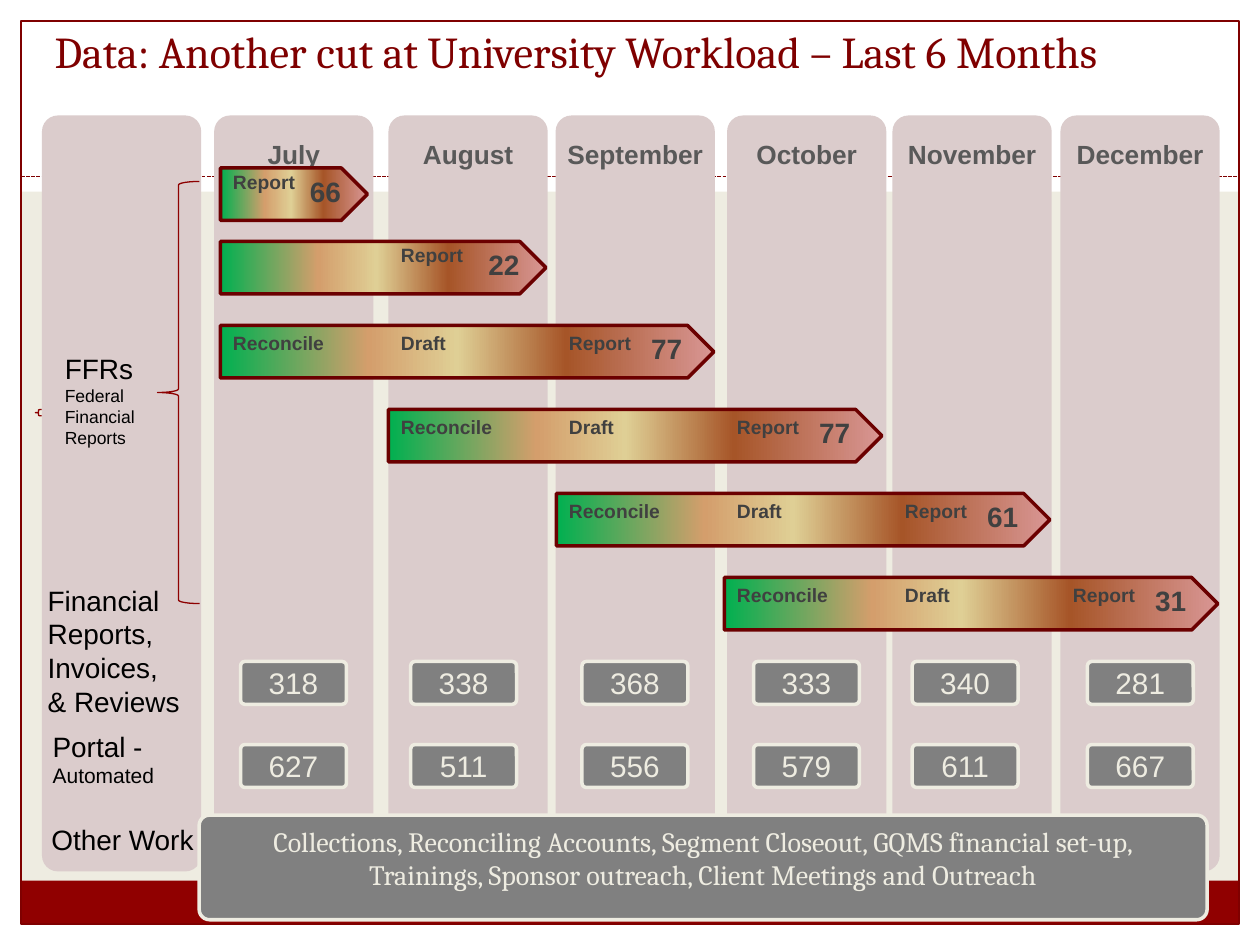
import dataclasses

import lxml.etree
import pptx
import pptx.dml.color
import pptx.enum.dml
import pptx.enum.shapes
import pptx.enum.text
import pptx.oxml.ns
import pptx.util

Pt = pptx.util.Pt
SHAPE = pptx.enum.shapes.MSO_SHAPE
ALIGN = pptx.enum.text.PP_ALIGN
ANCHOR = pptx.enum.text.MSO_ANCHOR
qn = pptx.oxml.ns.qn


@dataclasses.dataclass(frozen=True)
class Theme:
    sans: str = "Arial"
    serif: str = "Cambria"
    paper: str = "EEECE1"
    white: str = "FFFFFF"
    black: str = "000000"
    crimson: str = "900000"
    maroon: str = "7F0000"
    brace: str = "8D0000"
    bar_edge: str = "6B0000"
    column: str = "DBCCCC"
    badge: str = "808080"
    month: str = "595959"
    stage: str = "404040"
    bar_stops: tuple = ((0, "00B050"), (30, "D49E6C"), (48, "DFCF95"),
                        (70, "A65528"), (100, "D99694"), (100, "663012"))
    title_size: float = 25.2
    count_size: float = 17
    label_size: float = 16
    month_size: float = 15
    note_size: float = 12
    stage_size: float = 11
    small_size: float = 10


class WorkloadSlide:
    def __init__(self, deck, theme):
        self.theme = theme
        self.slide = deck.slides.add_slide(deck.slide_layouts[5])
        background = self.slide.background.fill
        background.solid()
        background.fore_color.rgb = self.rgb(theme.paper)

    def rgb(self, color):
        return pptx.dml.color.RGBColor.from_string(color)

    def set_text(self, frame, text, sizes, color, font=None, bold=False, align=ALIGN.LEFT):
        frame.text = text
        for index, paragraph in enumerate(frame.paragraphs):
            paragraph.alignment = align
            for run in paragraph.runs:
                self.style(run, sizes[min(index, len(sizes) - 1)], color, font, bold)

    def style(self, run, size, color, font=None, bold=False):
        run.font.size = Pt(size)
        run.font.name = font or self.theme.sans
        run.font.bold = bold
        run.font.color.rgb = self.rgb(color)

    def title(self, text, box):
        heading = self.slide.shapes.title
        heading.left, heading.top, heading.width, heading.height = map(Pt, box)
        frame = heading.text_frame
        frame.auto_size = pptx.enum.text.MSO_AUTO_SIZE.NONE
        frame.vertical_anchor = ANCHOR.BOTTOM
        self.set_text(frame, text, [self.theme.title_size], self.theme.maroon, self.theme.serif)
        self.slide.shapes.element.append(heading.element)

    def shape(self, kind, box, fill=None, line=None, weight=0.75, corner=None):
        shape = self.slide.shapes.add_shape(kind, *map(Pt, box))
        shape.shadow.inherit = False
        if fill:
            shape.fill.solid()
            shape.fill.fore_color.rgb = self.rgb(fill)
        else:
            shape.fill.background()
        if line:
            shape.line.color.rgb = self.rgb(line)
            shape.line.width = Pt(weight)
        else:
            shape.line.fill.background()
        if corner:
            shape.adjustments[0] = corner
        return shape

    def panel(self, box):
        return self.shape(SHAPE.ROUNDED_RECTANGLE, box, self.theme.column, corner=0.1)

    def badge(self, text, box, size, font=None, anchor=ANCHOR.MIDDLE, inset=0):
        badge = self.shape(SHAPE.ROUNDED_RECTANGLE, box, self.theme.badge,
                           self.theme.paper, 2, 0.1)
        frame = badge.text_frame
        frame.word_wrap = True
        frame.vertical_anchor = anchor
        frame.margin_top = frame.margin_bottom = Pt(inset)
        self.set_text(frame, text, [size], self.theme.paper, font, align=ALIGN.CENTER)

    def label(self, text, box, sizes, color, bold=False, align=ALIGN.LEFT):
        label = self.slide.shapes.add_textbox(*map(Pt, box))
        label.text_frame.word_wrap = True
        self.set_text(label.text_frame, text, sizes, color, bold=bold, align=align)
        return label.text_frame

    def bar(self, box):
        bar = self.shape(SHAPE.PENTAGON, box, line=self.theme.bar_edge, weight=2)
        bar.fill.gradient()
        bar.fill.gradient_angle = 0
        stops = bar.element.spPr.find(qn("a:gradFill")).find(qn("a:gsLst"))
        for stop in list(stops):
            stops.remove(stop)
        for position, color in self.theme.bar_stops:
            stop = lxml.etree.SubElement(stops, qn("a:gs"), pos=str(position * 1000))
            lxml.etree.SubElement(stop, qn("a:srgbClr"), val=color)

    def dashed_rule(self, left, right, top):
        rule = self.slide.shapes.add_connector(
            pptx.enum.shapes.MSO_CONNECTOR.STRAIGHT, Pt(left), Pt(top), Pt(right), Pt(top))
        rule.line.color.rgb = self.rgb(self.theme.maroon)
        rule.line.width = Pt(0.75)
        rule.line.dash_style = pptx.enum.dml.MSO_LINE.SQUARE_DOT
        lxml.etree.SubElement(rule.element.spPr, qn("a:effectLst"))


MONTHS = [
    ("July", 122.4, 137.5, 318, 627),
    ("August", 222, 234.7, 338, 511),
    ("September", 317.5, 332.6, 368, 556),
    ("October", 415.5, 430.6, 333, 579),
    ("November", 510, 521.3, 340, 611),
    ("December", 606, 621.4, 281, 667),
]
FULL_CYCLE = ("Reconcile", "Draft", "Report")
REPORT_BARS = [
    (0, 186, 282, FULL_CYCLE, 77),
    (1, 234, 282, FULL_CYCLE, 77),
    (2, 282, 282, FULL_CYCLE, 61),
    (3, 330, 282, FULL_CYCLE, 31),
    (0, 96, 84, ("Report",), 66),
    (0, 138, 186, ("", "Report"), 22),
]
BAR_LEFT, MONTH_STEP = 126, 96
COLUMN_TOP, COLUMN_WIDTH, COLUMN_HEIGHT = 66, 91, 432


def main():
    theme = Theme()
    deck = pptx.Presentation()
    deck.slide_width, deck.slide_height = Pt(720), Pt(540)
    page = WorkloadSlide(deck, theme)

    for edge in [(0, 528, 720, 12), (0, 0, 720, 109.5), (0, 0, 12, 540), (708, 0, 12, 540)]:
        page.shape(SHAPE.RECTANGLE, edge, theme.white)
    page.shape(SHAPE.RECTANGLE, (12, 503.3, 696, 24.5), theme.crimson)
    page.shape(SHAPE.RECTANGLE, (12, 12, 696, 516), line=theme.maroon)
    page.dashed_rule(12, 708, 100.8)

    page.panel((24, COLUMN_TOP, COLUMN_WIDTH, COLUMN_HEIGHT))
    for month, left, badge_left, reviews, automated in MONTHS:
        page.panel((left, COLUMN_TOP, COLUMN_WIDTH, COLUMN_HEIGHT))
        heading = page.label(month, (left, COLUMN_TOP, COLUMN_WIDTH, 36), [theme.month_size],
                             theme.month, True, ALIGN.CENTER)
        heading.margin_left = heading.margin_right = Pt(4)
        heading.margin_top = Pt(12.8)
        for count, top in ((reviews, 378), (automated, 425.5)):
            page.badge(str(count), (badge_left, top, 60.5, 24.5), theme.count_size)

    page.label("Financial Reports, Invoices, & Reviews", (20.2, 329.8, 91, 85),
               [theme.label_size], theme.black)
    portal = page.label("Portal - ", (23, 413.3, 96, 41), [theme.label_size], theme.black)
    automated_note = portal.paragraphs[0].add_run()
    automated_note.text = "Automated"
    page.style(automated_note, theme.note_size, theme.black)
    page.title("Data: Another cut at University Workload – Last 6 Months", (24, 5.8, 672, 41.8))
    page.label("FFRs\nFederal\nFinancial\nReports", (30, 197.3, 102, 63),
               [theme.label_size, theme.small_size], theme.black)
    page.badge("Collections, Reconciling Accounts, Segment Closeout, GQMS financial set-up, "
               "Trainings, Sponsor outreach, Client Meetings and Outreach",
               (113.8, 465.8, 576, 59.8), theme.label_size, theme.serif, ANCHOR.TOP, 3.6)

    for first_month, top, width, stages, count in REPORT_BARS:
        left = BAR_LEFT + first_month * MONTH_STEP
        full = stages == FULL_CYCLE
        page.bar((left, top, width, 30))
        for position, stage in enumerate(stages):
            if stage:
                page.label(stage, (left + position * MONTH_STEP, top - (0 if full else 2.5), 90, 21),
                           [theme.stage_size], theme.stage, True)
        count_center = left + width - (27 if full else 24)
        page.label(str(count), (count_center - 21, top, 42, 26.6), [theme.label_size],
                   theme.stage, True, ALIGN.CENTER)

    page.label("Other Work", (22.3, 466.6, 108, 26.6), [theme.label_size], theme.black)
    for brace in [(20.2, 234, 3.6, 3.6), (90, 103.7, 24, 241.2)]:
        page.shape(SHAPE.LEFT_BRACE, brace, line=theme.brace)
    deck.save("out.pptx")


if __name__ == "__main__":
    main()
